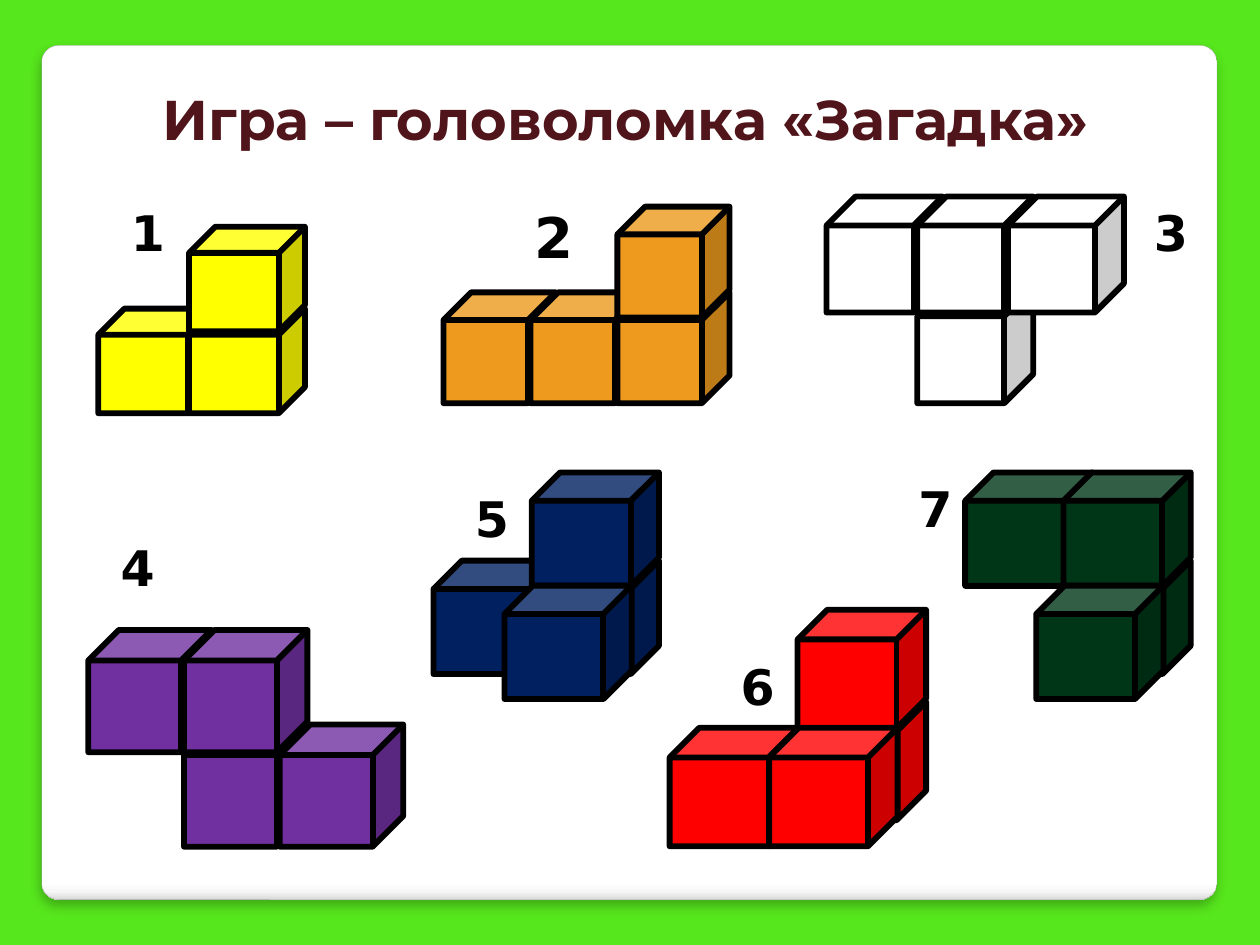
"""Build the cube puzzle slide: seven numbered figures on a white panel."""
from lxml import etree
from pptx import Presentation, util as u
from pptx.dml.color import RGBColor
from pptx.enum import shapes, text
from pptx.oxml import parse_xml
from pptx.oxml.ns import nsdecls, qn

COLORS = {
    "back": "57E71D", "edge": "A4A4A4", "title": "50141B", "ink": "000000",
    "yellow": "FFFF00", "orange": "ED9A1F", "white": "FFFFFF",
    "violet": "7030A0", "navy": "002060", "red": "FF0000", "green": "003618",
    "mist": "F7F7F7", "rim": "DADADA",
}
PANEL_STOPS = [(0, "white"), (98, "white"), (99, "mist"), (100, "rim")]
FIGURES = [
    ("yellow", (0.78, 1.8), (0.92, 0.83), (0.72, 0.65),
     [(0, 1, 0), (1, 1, 0), (1, 0, 0)]),
    ("orange", (3.52, 1.64), (0.89, 0.88), (0.69, 0.68),
     [(0, 1, 0), (1, 1, 0), (2, 1, 0), (2, 0, 0)]),
    ("white", (6.56, 1.56), (0.92, 0.92), (0.72, 0.72),
     [(1, 1, 0), (0, 0, 0), (1, 0, 0), (2, 0, 0)]),
    ("violet", (0.7, 5), (0.98, 0.97), (0.76, 0.75),
     [(1, 1, 0), (0, 0, 0), (1, 0, 0), (2, 1, 0)]),
    ("navy", (3.44, 3.75), (1.01, 0.9), (0.78, 0.7),
     [(0, 1, 0), (1, 1, 0), (1, 0, 0), (1, 1, 1)]),
    ("red", (5.54, 4.84), (1.02, 0.94), (0.79, 0.73),
     [(0, 1, 1), (1, 1, 0), (1, 0, 0), (1, 1, 1)]),
    ("green", (7.66, 3.75), (1.01, 0.9), (0.78, 0.7),
     [(1, 1, 0), (0, 0, 0), (1, 0, 0), (1, 1, 1)]),
]
NUMBERS = [
    (0.94, 1.56, 28), (4.14, 1.56, 32), (9.06, 1.56, 28), (0.86, 4.22, 28),
    (3.67, 3.83, 28), (5.78, 5.16, 28), (7.19, 3.75, 28),
]


class Deck:
    """Hold the style and the current slide, on a grid of 10 by 7.5 units."""

    def __init__(self, prs):
        self.unit = prs.slide_width / 10
        self.s = prs.slides.add_slide(prs.slide_layouts[5])
        fill = self.s.background.fill
        fill.solid()
        fill.fore_color.rgb = self.color("back")

    def color(self, name):
        return RGBColor.from_string(COLORS[name])

    def box(self, *lengths):
        return [u.Emu(round(n * self.unit)) for n in lengths]

    def outline(self, sp, name, width):
        sp.line.color.rgb = self.color(name)
        sp.line.width = u.Pt(width)
        sp.shadow.inherit = False

    def add_text(self, sp, words, size, font, color, wrap):
        tf = sp.text_frame
        tf.word_wrap = wrap
        tf.auto_size = text.MSO_AUTO_SIZE.SHAPE_TO_FIT_TEXT
        tf.vertical_anchor = text.MSO_ANCHOR.TOP
        p = tf.paragraphs[0]
        p.alignment = text.PP_ALIGN.LEFT
        r = p.add_run()
        r.text = words
        r.font.size, r.font.name, r.font.bold = u.Pt(size), font, True
        r.font.color.rgb = self.color(color)

    def panel(self, *at):
        sp = self.s.shapes.add_shape(
            shapes.MSO_SHAPE.ROUNDED_RECTANGLE, *self.box(*at))
        sp.adjustments[0] = 0.02
        sp.fill.gradient()
        sp.fill.gradient_angle = 270
        stops = sp._element.spPr.find(qn("a:gradFill")).find(qn("a:gsLst"))
        for old in list(stops):
            stops.remove(old)
        for pos, name in PANEL_STOPS:
            gs = etree.SubElement(stops, qn("a:gs"), pos=str(pos * 1000))
            etree.SubElement(gs, qn("a:srgbClr"), val=COLORS[name])
        self.outline(sp, "edge", 0.16)
        sp._element.spPr.find(qn("a:effectLst")).append(parse_xml(
            f'<a:outerShdw {nsdecls("a")} blurRad="{u.Pt(6)}" dist="{u.Pt(4)}" '
            f'dir="5400000" rotWithShape="0"><a:srgbClr val="{COLORS["ink"]}">'
            '<a:alpha val="25000"/></a:srgbClr></a:outerShdw>'))

    def title(self, words, *at):
        sp = self.s.shapes.title
        sp.left, sp.top, sp.width, sp.height = self.box(*at)
        self.add_text(sp, words, 32, "Montserrat", "title", True)
        tree = self.s.shapes._spTree
        tree.remove(sp._element)
        tree.append(sp._element)

    def figure(self, color, origin, size, step, cells):
        group = self.s.shapes.add_group_shape()
        (x, y), (w, h), (dx, dy) = origin, size, step
        for col, row, layer in cells:
            sp = group.shapes.add_shape(shapes.MSO_SHAPE.CUBE, *self.box(
                x + col * dx - layer * h * 0.24,
                y + row * dy + layer * h * 0.22, w, h))
            sp.fill.solid()
            sp.fill.fore_color.rgb = self.color(color)
            self.outline(sp, "ink", 3.35)

    def number(self, words, x, y, size):
        sp = self.s.shapes.add_textbox(
            *self.box(x, y, size / 60, size / 50))
        self.add_text(sp, words, size, "DejaVu Sans", "ink", False)


def main():
    prs = Presentation()
    prs.slide_width, prs.slide_height = u.Inches(10), u.Inches(7.5)
    deck = Deck(prs)
    deck.panel(0.33, 0.36, 9.33, 6.78)
    deck.title("Игра – головоломка «Загадка»", 1.19, 0.62, 8.11, 0.64)
    for figure in FIGURES:
        deck.figure(*figure)
    for i, place in enumerate(NUMBERS, 1):
        deck.number(str(i), *place)
    prs.save("out.pptx")


if __name__ == "__main__":
    main()
